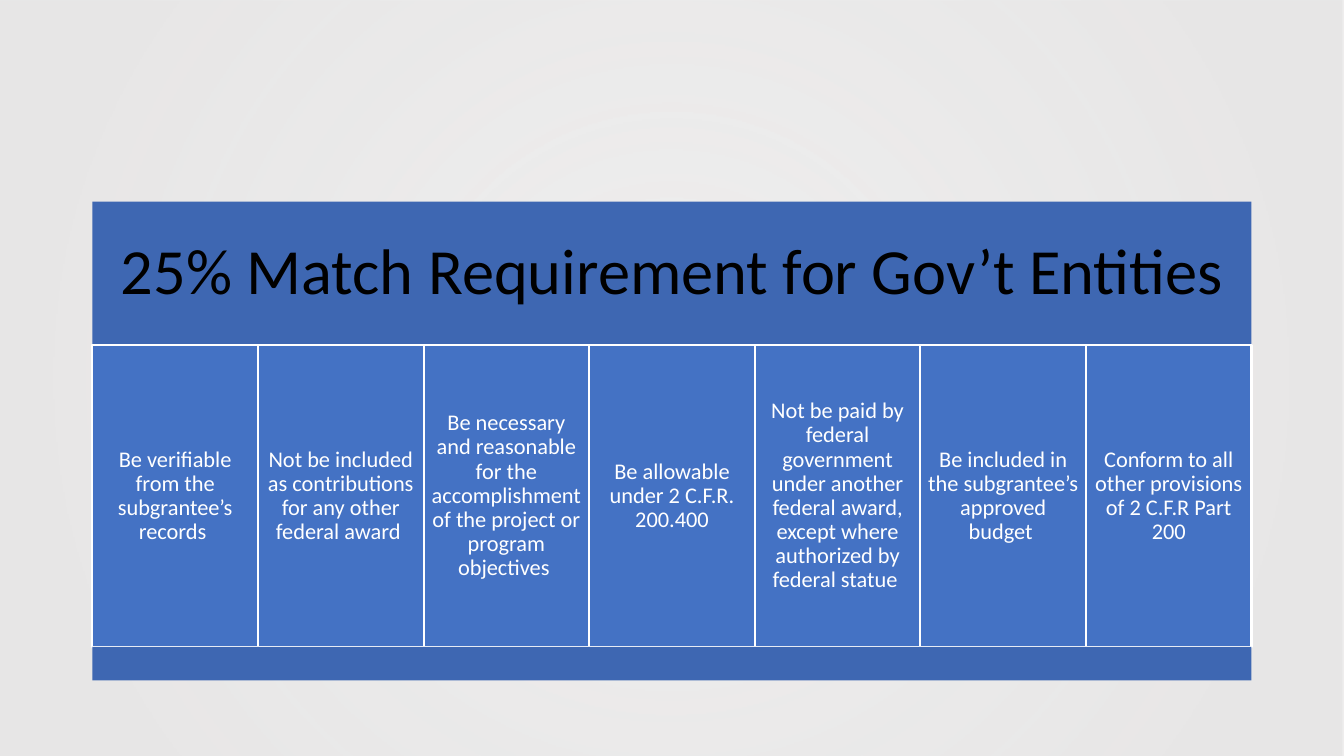
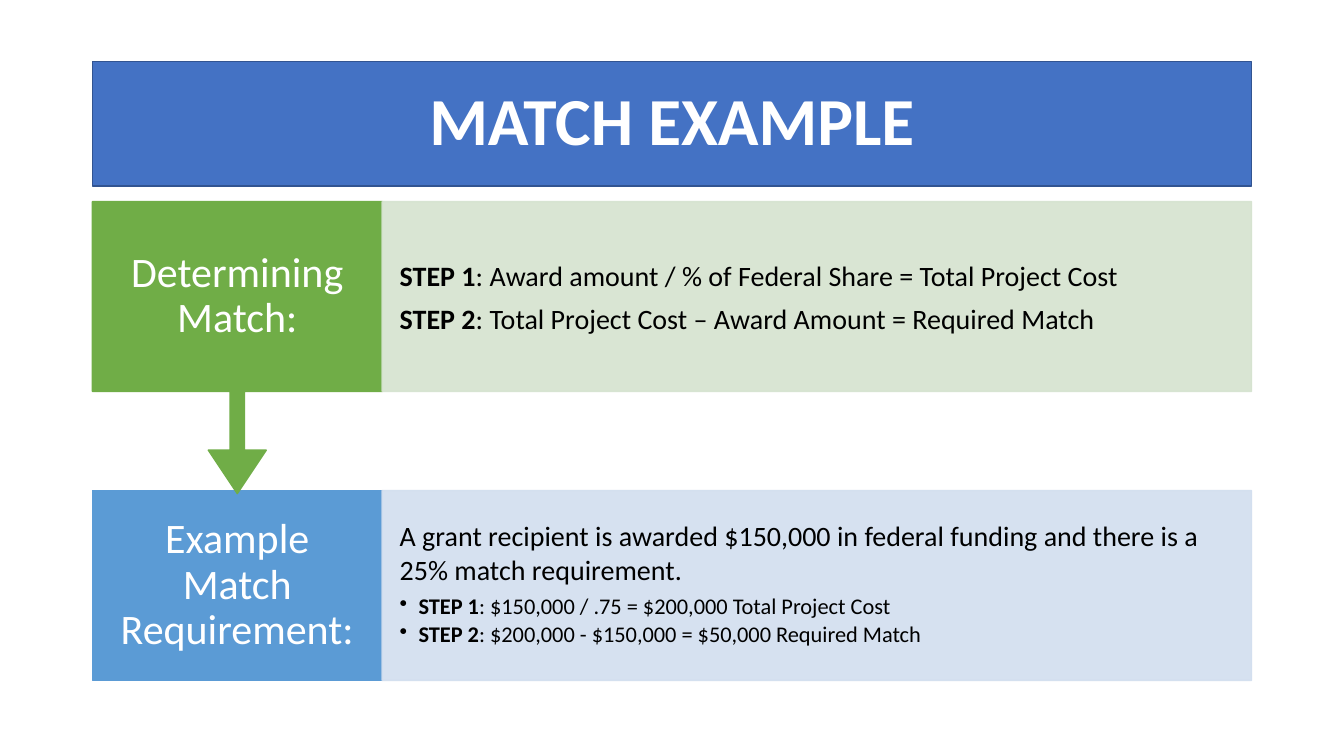
from dataclasses import dataclass
from typing import NamedTuple

from lxml.etree import SubElement
from pptx import Presentation
from pptx.dml.color import RGBColor
from pptx.enum.shapes import MSO_SHAPE
from pptx.enum.text import MSO_ANCHOR, PP_ALIGN
from pptx.oxml import parse_xml
from pptx.oxml.ns import nsdecls, qn
from pptx.util import Pt


@dataclass(frozen=True)
class Theme:
    font: str = "Calibri"
    white: str = "FFFFFF"
    black: str = "000000"
    blue: str = "4472C4"
    blue_edge: str = "325491"
    band: str = "3E67B2"
    haze: str = "E7E6E6"
    green: str = "70AD47"
    pale_green: str = "D5E3CF"
    sky: str = "5B9BD5"
    pale_blue: str = "D2DEEF"
    title: int = 48
    heading: int = 46
    label: int = 30
    body: int = 20
    small: int = 16


class Box(NamedTuple):
    left: float
    top: float
    width: float
    height: float


THEME = Theme()
SLIDE = Box(0, 0, 960, 540)
CONTENT = Box(66, 144, 828, 342)
TITLE = Box(66, 44, 828, 89)

REQUIREMENTS = [
    "Be verifiable from the subgrantee’s records ",
    "Not be included as contributions for any other federal award ",
    "Be necessary and reasonable for the accomplishment of the project or program objectives ",
    "Be allowable under 2 C.F.R. 200.400",
    "Not be paid by federal government under another federal award, except where authorized by federal statue ",
    "Be included in the subgrantee’s approved budget ",
    "Conform to all other provisions of 2 C.F.R Part 200",
]
FORMULA = [
    ("STEP 1", ": Award amount / % of Federal Share = Total Project Cost"),
    ("STEP 2", ": Total Project Cost – Award Amount = Required Match"),
]
SCENARIO = "A grant recipient is awarded $150,000 in federal funding and there is a 25% match requirement."
WORKED_STEPS = [
    ("STEP 1", ": $150,000 / .75 = $200,000 Total Project Cost"),
    ("STEP 2", ": $200,000 - $150,000 = $50,000 Required Match"),
]


def set_alpha(color_format_parent, percent):
    for color in color_format_parent.iter(qn("a:srgbClr")):
        SubElement(color, qn("a:alpha")).set("val", str(percent * 1000))


def add_panel(slide, box, fill, edge=None, edge_width=1, kind=MSO_SHAPE.RECTANGLE, alpha=None):
    panel = slide.shapes.add_shape(kind, *map(Pt, box))
    panel.shadow.inherit = False
    panel.fill.solid()
    panel.fill.fore_color.rgb = RGBColor.from_string(fill)
    if edge:
        panel.line.color.rgb = RGBColor.from_string(edge)
        panel.line.width = Pt(edge_width)
    else:
        panel.line.fill.background()
    if alpha:
        set_alpha(panel.element.spPr, alpha)
    return panel


def set_frame(panel, inset_x, inset_y, anchor=MSO_ANCHOR.MIDDLE):
    frame = panel.text_frame
    frame.word_wrap = True
    frame.vertical_anchor = anchor
    frame.margin_left = frame.margin_right = Pt(inset_x)
    frame.margin_top = frame.margin_bottom = Pt(inset_y)
    return frame


def style_paragraph(paragraph, size, color, align=PP_ALIGN.LEFT, spacing=1.0, after=0.35, bold=False):
    paragraph.alignment = align
    paragraph.line_spacing = spacing
    paragraph.space_after = Pt(size * after)
    for run in paragraph.runs:
        run.font.name = THEME.font
        run.font.size = Pt(size)
        run.font.color.rgb = RGBColor.from_string(color)
        run.font.bold = bold


def write_centred(panel, text, size, color, inset_x, inset_y, bold=False):
    frame = set_frame(panel, inset_x, inset_y)
    frame.text = text
    style_paragraph(frame.paragraphs[0], size, color, PP_ALIGN.CENTER, 0.9, bold=bold)


def write_step(paragraph, step, size, **style):
    for part in step:
        paragraph.add_run().text = part
    style_paragraph(paragraph, size, THEME.black, **style)
    paragraph.runs[0].font.bold = True


def add_bullet(paragraph, indent):
    paragraph.level = 1
    properties = paragraph._p.get_or_add_pPr()
    properties.set("marL", str(Pt(indent)))
    properties.set("indent", str(-Pt(indent)))
    SubElement(properties, qn("a:buChar")).set("char", "•")


def add_haze(slide, box):
    haze = add_panel(slide, box, THEME.haze)
    stops = "".join(
        f'<a:gs pos="{position * 1000}"><a:srgbClr val="{THEME.haze}">'
        f'<a:alpha val="{alpha * 1000}"/></a:srgbClr></a:gs>'
        for position, alpha in [(10, 68), (85, 97)]
    )
    gradient = parse_xml(
        f'<a:gradFill {nsdecls("a")} rotWithShape="1"><a:gsLst>{stops}</a:gsLst>'
        '<a:path path="circle"><a:fillToRect l="50000" t="50000" r="50000" b="50000"/>'
        "</a:path></a:gradFill>"
    )
    properties = haze.element.spPr
    properties.replace(properties.find(qn("a:solidFill")), gradient)


def add_requirements(slide, box):
    heading_height, column_height, base_height = (box.height * share for share in (0.3, 0.63, 0.07))
    heading = add_panel(slide, box._replace(height=heading_height), THEME.band)
    write_centred(heading, "25% Match Requirement for Gov’t Entities", THEME.heading, THEME.black, 13.8, 13.8)
    column_width = box.width / len(REQUIREMENTS)
    column_top = box.top + heading_height
    for index, requirement in enumerate(REQUIREMENTS):
        place = Box(box.left + index * column_width, column_top, column_width, column_height)
        column = add_panel(slide, place, THEME.blue, THEME.white, 1.5)
        write_centred(column, requirement, THEME.small, THEME.white, 4.8, 4.8)
    add_panel(slide, box._replace(top=column_top + column_height, height=base_height), THEME.band)


def add_title(slide, box):
    title = add_panel(slide, box, THEME.blue, THEME.blue_edge)
    write_centred(title, "MATCH EXAMPLE", THEME.title, THEME.white, 7.2, 3.6, bold=True)


def add_row(slide, box, label_text, color, pale, callout_height=None, anchor=MSO_ANCHOR.MIDDLE):
    label_width = box.width / 4
    detail_box = Box(box.left + label_width, box.top, box.width - label_width, box.height)
    label_box = box._replace(width=label_width, height=callout_height or box.height)
    kind = MSO_SHAPE.DOWN_ARROW_CALLOUT if callout_height else MSO_SHAPE.RECTANGLE
    label = add_panel(slide, label_box, color, color, kind=kind)
    if callout_height:
        for index, ratio in enumerate((0.05, 0.1, 0.15, box.height / callout_height)):
            label.adjustments[index] = ratio
    write_centred(label, label_text, THEME.label, THEME.white, 14.5, 16.5)
    detail = add_panel(slide, detail_box, pale, pale, alpha=90)
    return set_frame(detail, 12.5, 20, anchor)


def add_example(slide, box):
    callout_height = box.height * 0.61
    row = box._replace(height=callout_height * 0.65)
    lower_row = row._replace(top=box.top + box.height - row.height)

    scenario = add_row(slide, lower_row, "Example Match Requirement:", THEME.sky, THEME.pale_blue,
                       anchor=MSO_ANCHOR.TOP)
    scenario.text = SCENARIO
    style_paragraph(scenario.paragraphs[0], THEME.body, THEME.black)
    for step in WORKED_STEPS:
        paragraph = scenario.add_paragraph()
        write_step(paragraph, step, THEME.small, spacing=0.9, after=0.15)
        add_bullet(paragraph, 13.5)

    formula = add_row(slide, row, "Determining Match:", THEME.green, THEME.pale_green, callout_height)
    for index, step in enumerate(FORMULA):
        paragraph = formula.add_paragraph() if index else formula.paragraphs[0]
        write_step(paragraph, step, THEME.body)


def main():
    deck = Presentation()
    deck.slide_width, deck.slide_height = Pt(SLIDE.width), Pt(SLIDE.height)
    blank = deck.slide_layouts[6]

    requirements = deck.slides.add_slide(blank)
    add_haze(requirements, SLIDE)
    add_requirements(requirements, CONTENT)

    example = deck.slides.add_slide(blank)
    add_title(example, TITLE)
    add_example(example, CONTENT)

    deck.save("out.pptx")


if __name__ == "__main__":
    main()
